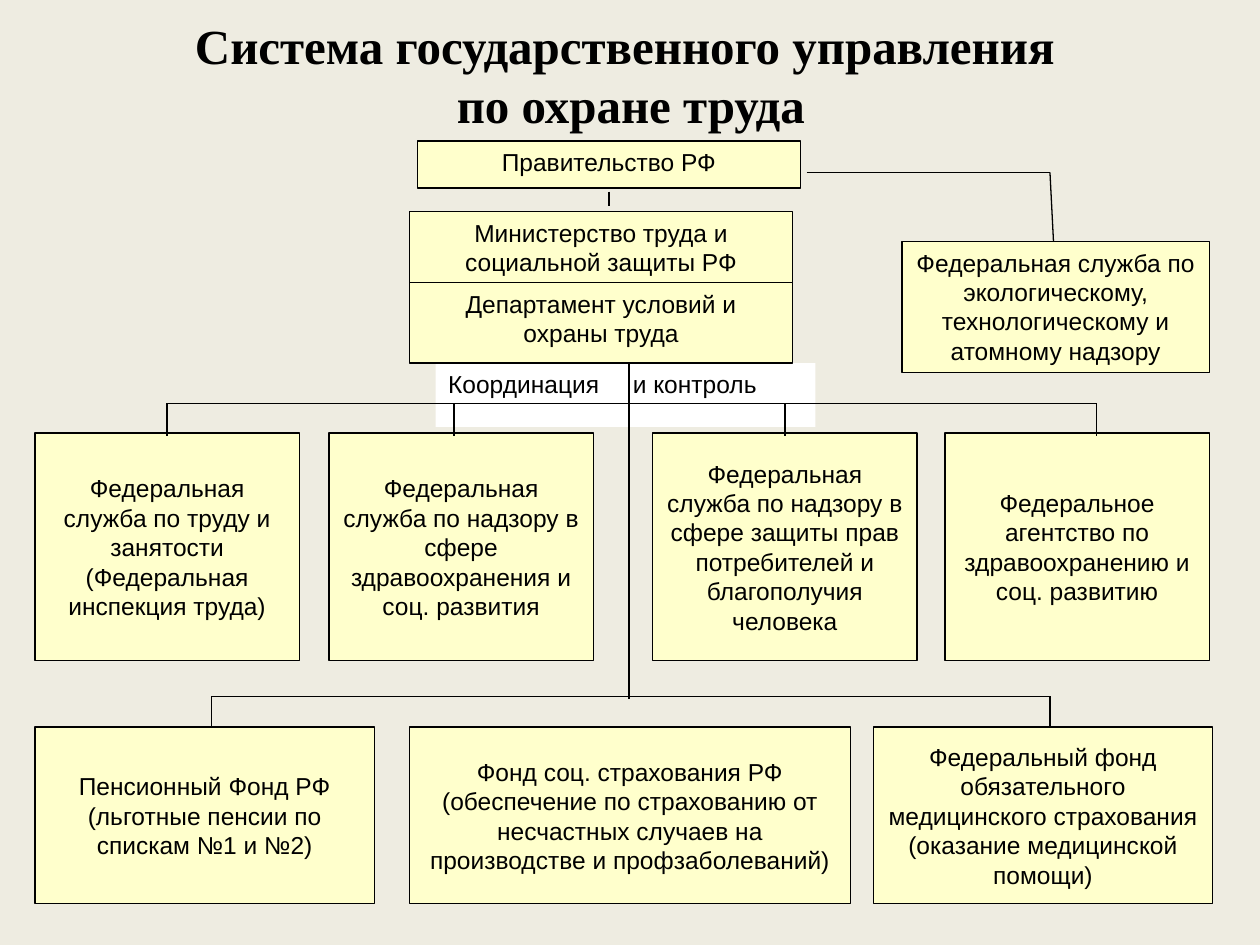
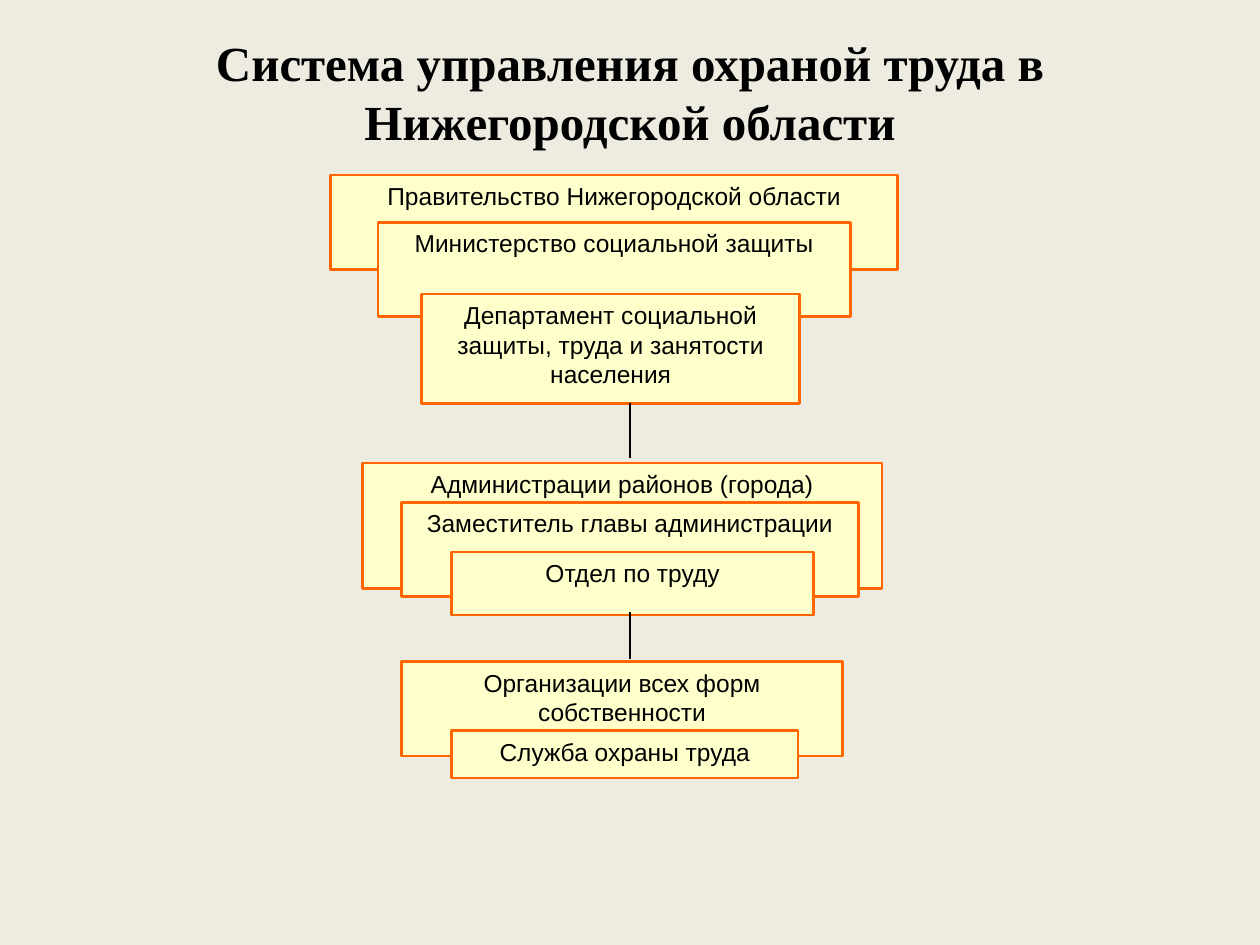
import pptx
import pptx.dml.color
import pptx.enum.shapes
import pptx.enum.text
import pptx.oxml
import pptx.oxml.ns
import pptx.util

Pt = pptx.util.Pt
Shape = pptx.enum.shapes.MSO_SHAPE
Align = pptx.enum.text.PP_ALIGN
Anchor = pptx.enum.text.MSO_ANCHOR

COLORS = {
    "page": "EEECE1",
    "cream": "FFFFCC",
    "white": "FFFFFF",
    "black": "000000",
    "orange": "FF6600",
}
BODY = "Arial"
HEAD = "Times New Roman"


def color(name):
    return pptx.dml.color.RGBColor.from_string(COLORS[name])


def place(item, left, top, width, height):
    item.left, item.top = Pt(left), Pt(top)
    item.width, item.height = Pt(width), Pt(height)


def add_run(para, text, font, size, bold=False):
    run = para.add_run()
    run.text = text
    run.font.name = font
    run.font.size = Pt(size)
    run.font.bold = bold
    run.font.color.rgb = color("black")


def add_slide(deck, lines, frame):
    slide = deck.slides.add_slide(deck.slide_layouts.get_by_name("Title Only"))
    title = slide.shapes.title
    place(title, *frame)
    body = title.text_frame
    body.auto_size = pptx.enum.text.MSO_AUTO_SIZE.NONE
    body.vertical_anchor = Anchor.MIDDLE
    para = body.paragraphs[0]
    para.alignment = Align.CENTER
    for i, line in enumerate(lines):
        if i:
            para.add_line_break()
        add_run(para, line, HEAD, 28, True)
    return slide


def add_box(slide, frame, *lines, fill="cream", edge="black", weight=0.75,
            anchor=Anchor.TOP, align=Align.CENTER, kind=Shape.RECTANGLE):
    box = slide.shapes.add_shape(kind, *map(Pt, frame))
    box.shadow.inherit = False
    box.fill.solid()
    box.fill.fore_color.rgb = color(fill)
    if edge:
        box.line.color.rgb = color(edge)
        box.line.width = Pt(weight)
    else:
        box.line.fill.background()
    body = box.text_frame
    body.word_wrap = True
    body.vertical_anchor = anchor
    for i, line in enumerate(lines):
        para = body.add_paragraph() if i else body.paragraphs[0]
        para.alignment = align
        add_run(para, line, BODY, 14)
    return box


def add_tab(box, pos):
    props = box.text_frame.paragraphs[0].runs[0].font
    para = box.text_frame.paragraphs[0]._p.get_or_add_pPr()
    tabs = pptx.oxml.parse_xml(
        f'<a:tabLst {pptx.oxml.ns.nsdecls("a")}>'
        f'<a:tab pos="{Pt(pos)}" algn="l"/></a:tabLst>')
    para.append(tabs)


def add_line(slide, *ends):
    line = slide.shapes.add_connector(
        pptx.enum.shapes.MSO_CONNECTOR.STRAIGHT, *map(Pt, ends))
    line.line.color.rgb = color("black")
    line.line.width = Pt(0.75)
    props = line._element.spPr
    props.append(pptx.oxml.parse_xml(
        f'<a:effectLst {pptx.oxml.ns.nsdecls("a")}/>'))


def build_state(deck):
    slide = add_slide(
        deck, ["Система государственного управления ", "по охране труда"],
        (36.5, 15, 648, 55.5))
    label = add_box(slide, (249, 207.5, 217, 36.5), "Координация\tи контроль",
                    fill="white", edge=None, align=Align.LEFT)
    add_tab(label, 105.5)

    add_box(slide, (238.5, 80.5, 219, 27), "Правительство РФ")
    add_box(slide, (234, 121, 219, 44.5),
            "Министерство труда и социальной защиты РФ")
    add_box(slide, (234, 161.5, 219, 46), "Департамент условий и охраны труда")
    add_box(slide, (515.5, 138, 175.5, 75),
            "Федеральная служба по экологическому, "
            "технологическому и атомному надзору")

    agencies = [
        (20, "Федеральная служба по труду и занятости "
             "(Федеральная инспекция труда)"),
        (188, "Федеральная служба по надзору в сфере "
              "здравоохранения и соц. развития"),
        (373, "Федеральная служба по надзору в сфере защиты прав "
              "потребителей и благополучия человека"),
        (540, "Федеральное агентство по здравоохранению и соц. развитию"),
    ]
    for left, text in agencies:
        add_box(slide, (left, 247.5, 151, 130), text, anchor=Anchor.MIDDLE)

    funds = [
        (20, 194, ["Пенсионный Фонд РФ",
                   "(льготные пенсии по спискам №1 и №2)"]),
        (234, 252, ["Фонд соц. страхования РФ (обеспечение по страхованию от "
                    "несчастных случаев на производстве и профзаболеваний)"]),
        (499, 194, ["Федеральный фонд обязательного медицинского страхования "
                    "(оказание медицинской помощи)"]),
    ]
    for left, width, lines in funds:
        add_box(slide, (left, 415.5, width, 101), *lines, anchor=Anchor.MIDDLE)

    rails = [(230.5, 249, [95.5, 259.5, 448.5, 626.5]),
             (398, 416, [121, 600])]
    for top, foot, stems in rails:
        add_line(slide, stems[0], top, stems[-1], top)
        for stem in stems:
            add_line(slide, stem, top, stem, foot)

    add_line(slide, 461, 98.5, 600, 98.5)
    add_line(slide, 600, 98.5, 602, 138)
    add_line(slide, 348, 109.5, 348, 118)
    add_line(slide, 359.5, 207.5, 359.5, 399.5)


def build_region(deck):
    slide = add_slide(
        deck, ["Система управления охраной труда в Нижегородской области"],
        (36, 21.5, 648, 61.5))
    levels = [
        ((189, 100, 324, 54), "Правительство Нижегородской области"),
        ((216, 127, 270, 54), "Министерство социальной защиты"),
        ((241, 168, 216, 62.5),
         "Департамент социальной защиты, труда и занятости населения"),
        ((207, 264.5, 297, 72), "Администрации районов (города)"),
        ((229.5, 287, 261, 54), "Заместитель главы администрации"),
        ((258, 315.5, 207, 36), "Отдел по труду"),
        ((229.5, 378, 252, 54), "Организации всех форм собственности"),
        ((258, 417.5, 198, 27), "Служба охраны труда"),
    ]
    for i, (frame, text) in enumerate(levels):
        kind = Shape.RECTANGLE if i else Shape.FLOWCHART_PROCESS
        add_box(slide, frame, text, edge="orange", weight=1.5, kind=kind)
    for top, foot in [(230.5, 261.5), (349.5, 376.5)]:
        add_line(slide, 360, top, 360, foot)


def main():
    deck = pptx.Presentation()
    deck.slide_width, deck.slide_height = Pt(720), Pt(540)
    back = deck.slide_master.background.fill
    back.solid()
    back.fore_color.rgb = color("page")
    build_state(deck)
    build_region(deck)
    deck.save("out.pptx")


if __name__ == "__main__":
    main()
